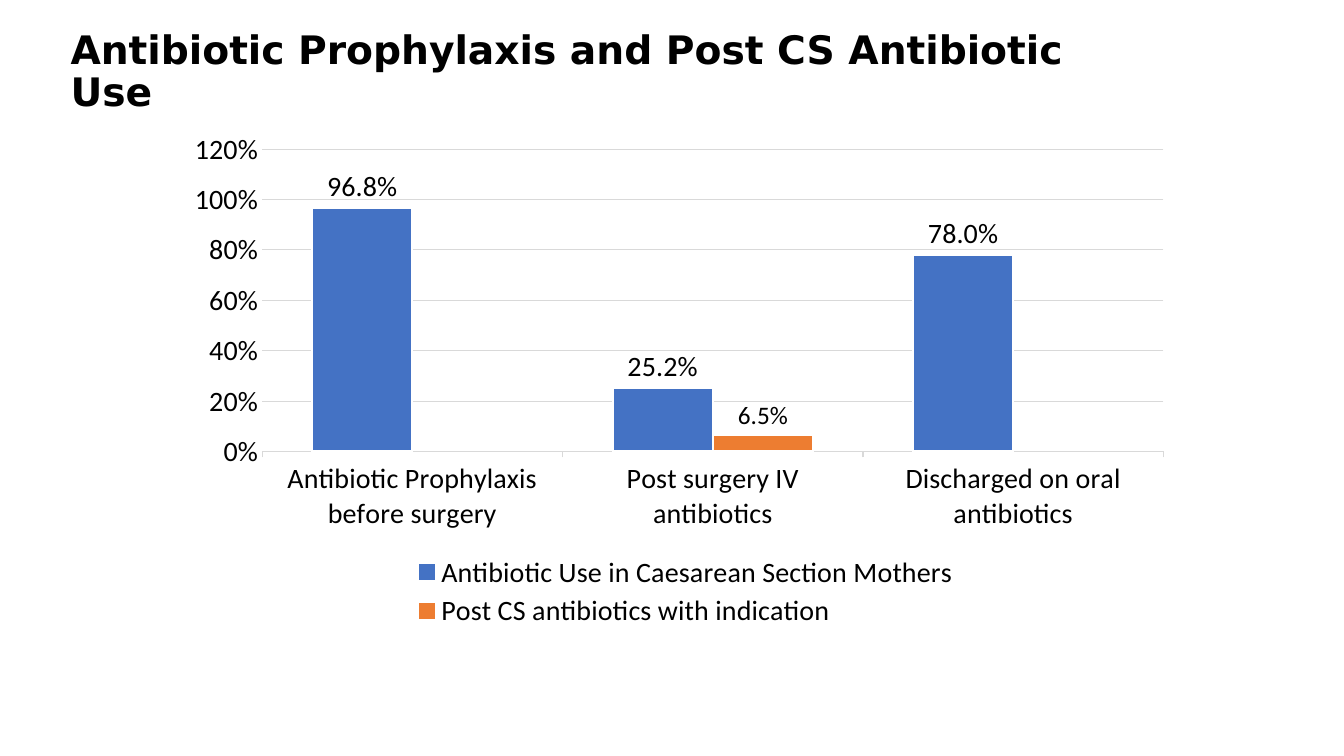
"""Build the slide on antibiotic use around caesarean section."""
from lxml.etree import SubElement
from pptx import Presentation
from pptx.chart.data import CategoryChartData
from pptx.dml.color import RGBColor
from pptx.enum.chart import XL_CHART_TYPE as ChartType
from pptx.enum.chart import XL_LABEL_POSITION as LabelPosition
from pptx.enum.chart import XL_LEGEND_POSITION as LegendPosition
from pptx.enum.chart import XL_TICK_MARK as TickMark
from pptx.enum.text import MSO_ANCHOR as Anchor
from pptx.enum.text import PP_ALIGN as Align
from pptx.oxml.ns import qn
from pptx.util import Inches, Pt

TITLE = "Antibiotic Prophylaxis and Post CS Antibiotic Use"
CATEGORIES = [
    "Antibiotic Prophylaxis before surgery",
    "Post surgery IV antibiotics",
    "Discharged on oral antibiotics",
]
SERIES = [
    {"name": "Antibiotic Use in Caesarean Section Mothers",
     "values": [0.968, 0.252, 0.78], "color": "blue", "label_size": 20},
    {"name": "Post CS antibiotics with indication",
     "values": [None, 0.065, None], "color": "orange", "label_size": 18},
]
COLORS = {"text": "000000", "blue": "4472C4", "orange": "ED7D31",
          "grid": "D9D9D9", "edge": "FFFFFF"}
TITLE_BOX = (0.6, 0.26, 10.98, 0.92)
CHART_BOX = (1.67, 1.2, 10.08, 5.1)
PLOT_BOX = (2.6, 1.48, 8.94, 3.0)
LEGEND_BOX = (4.0, 5.47, 5.6, 0.8)


def color(name):
    """Return the named colour."""
    return RGBColor.from_string(COLORS[name])


def format_font(font, size, name="Calibri", bold=False):
    """Set the face, size and colour of a font."""
    font.name, font.size, font.bold = name, Pt(size), bold
    font.color.rgb = color("text")


def format_line(line, name, width):
    """Set the colour and width of a line."""
    line.color.rgb, line.width = color(name), Pt(width)


def write_text(frame, text, size=18, font="Calibri", bold=False):
    """Write one left-aligned, vertically centred paragraph."""
    frame.word_wrap = True
    frame.vertical_anchor = Anchor.MIDDLE
    para = frame.paragraphs[0]
    para.alignment, para.line_spacing = Align.LEFT, 0.9
    span = para.add_run()
    span.text = text
    format_font(span.font, size, font, bold)


def place_part(parent, index, box, inner=False):
    """Fix a chart part at a slide position given in inches."""
    for old in parent.findall(qn("c:layout")):
        parent.remove(old)
    layout = parent.makeelement(qn("c:layout"), {})
    parent.insert(index, layout)
    manual = SubElement(layout, qn("c:manualLayout"))
    left, top, width, height = CHART_BOX
    settings = [("xMode", "edge"), ("yMode", "edge"),
                ("x", (box[0] - left) / width), ("y", (box[1] - top) / height),
                ("w", box[2] / width), ("h", box[3] / height)]
    if inner:
        settings.insert(0, ("layoutTarget", "inner"))
    for tag, value in settings:
        SubElement(manual, qn(f"c:{tag}"), val=str(value))


def add_chart(slide):
    """Add the clustered column chart."""
    data = CategoryChartData(number_format="0.0%")
    data.categories = CATEGORIES
    for item in SERIES:
        data.add_series(item["name"], item["values"])
    chart = slide.shapes.add_chart(
        ChartType.COLUMN_CLUSTERED, *map(Inches, CHART_BOX), data).chart
    chart.has_title = False
    format_font(chart.font, 10)

    category_axis, value_axis = chart.category_axis, chart.value_axis
    for axis in (category_axis, value_axis):
        format_font(axis.tick_labels.font, 20)
    category_axis.major_tick_mark = TickMark.OUTSIDE
    format_line(category_axis.format.line, "grid", 0.75)
    value_axis.major_tick_mark = TickMark.NONE
    value_axis.minimum_scale, value_axis.maximum_scale = 0, 1.2
    value_axis.major_unit = 0.2
    value_axis.tick_labels.number_format = "0%"
    value_axis.tick_labels.number_format_is_linked = False
    value_axis.format.line.fill.background()
    format_line(value_axis.major_gridlines.format.line, "grid", 0.75)

    plot = chart.plots[0]
    plot.gap_width, plot.overlap, plot.vary_by_categories = 100, 0, False
    for item, series in zip(SERIES, plot.series):
        series.format.fill.solid()
        series.format.fill.fore_color.rgb = color(item["color"])
        format_line(series.format.line, "edge", 1.5)
        labels = series.data_labels
        labels.show_value = True
        labels.position = LabelPosition.OUTSIDE_END
        labels.number_format = "0.0%"
        labels.number_format_is_linked = False
        format_font(labels.font, item["label_size"])

    chart.has_legend = True
    chart.legend.position = LegendPosition.BOTTOM
    chart.legend.include_in_layout = False
    format_font(chart.legend.font, 20)
    place_part(chart.element.find(".//" + qn("c:plotArea")), 0, PLOT_BOX, inner=True)
    place_part(chart.element.find(".//" + qn("c:legend")), 1, LEGEND_BOX)


def main():
    """Create the deck and save it."""
    deck = Presentation()
    deck.slide_width, deck.slide_height = Inches(13.33), Inches(7.5)
    slide = deck.slides.add_slide(deck.slide_layouts[5])
    title = slide.shapes.title
    title.left, title.top, title.width, title.height = map(Inches, TITLE_BOX)
    write_text(title.text_frame, TITLE, size=28, font="DejaVu Sans", bold=True)
    add_chart(slide)
    deck.save("out.pptx")


if __name__ == "__main__":
    main()
